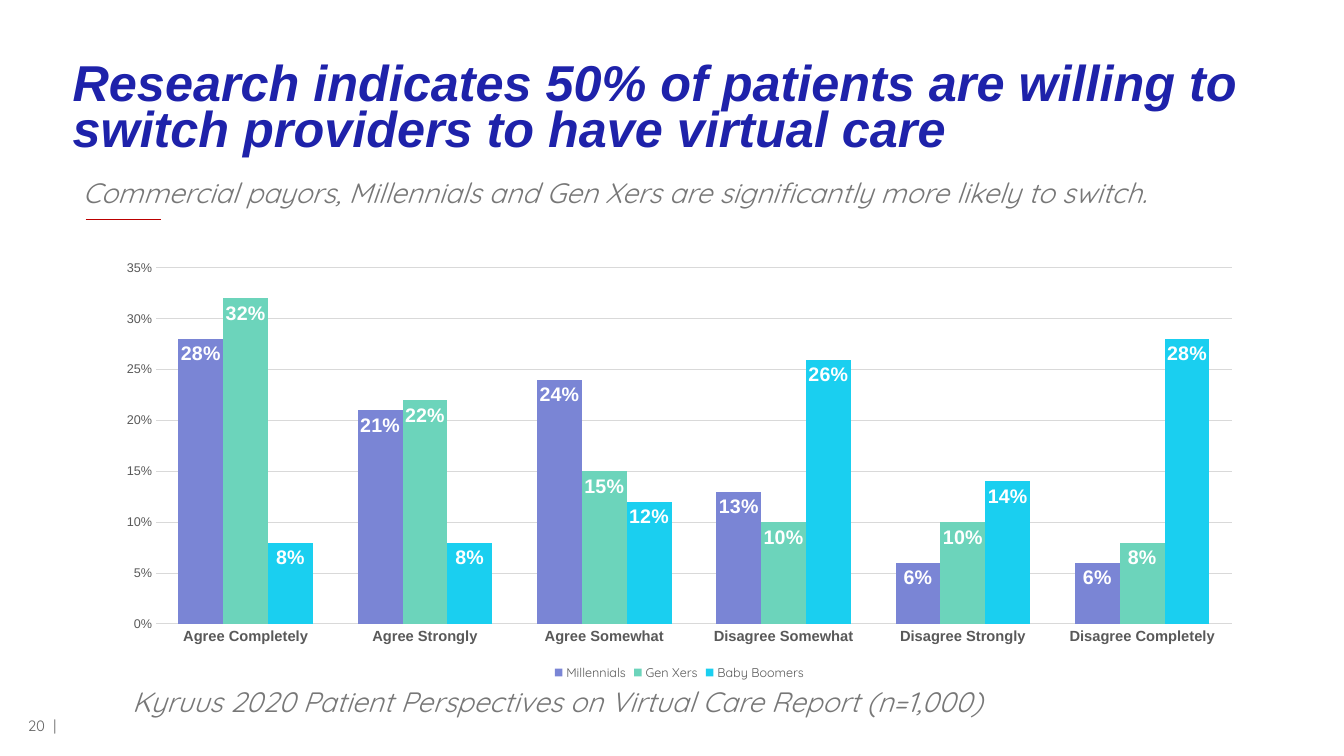
from dataclasses import dataclass

from pptx import Presentation
from pptx.chart.data import CategoryChartData
from pptx.dml.color import RGBColor
from pptx.enum.chart import XL_CHART_TYPE as ChartType
from pptx.enum.chart import XL_LABEL_POSITION as LabelPos
from pptx.enum.chart import XL_LEGEND_POSITION as LegendPos
from pptx.enum.chart import XL_TICK_MARK as TickMark
from pptx.enum.text import MSO_ANCHOR as Anchor
from pptx.enum.text import MSO_AUTO_SIZE as AutoSize
from pptx.enum.text import PP_ALIGN as Align
from pptx.oxml.ns import qn
from pptx.util import Pt

# Content
HEADLINE = ("Research indicates 50% of patients are willing to "
            "switch providers to have virtual care")
FINDING = ("Commercial payors, Millennials and Gen Xers are "
           "significantly more likely to switch.")
CITATION = "Kyruus 2020 Patient Perspectives on Virtual Care Report (n=1,000)"
PAGE_MARK = "20  |"
ANSWERS = ["Agree Completely", "Agree Strongly", "Agree Somewhat",
           "Disagree Somewhat", "Disagree Strongly", "Disagree Completely"]
GENERATIONS = {
    "Millennials": (0.28, 0.21, 0.24, 0.13, 0.06, 0.06),
    "Gen Xers": (0.32, 0.22, 0.15, 0.10, 0.10, 0.08),
    "Baby Boomers": (0.08, 0.08, 0.12, 0.26, 0.14, 0.28),
}


@dataclass(frozen=True)
class Theme:
    strong: str = "Arial"
    light: str = "Quicksand"
    headline: str = "1E22AA"
    muted: str = "777777"
    page: str = "666666"
    accent: str = "BB0000"
    axis: str = "595959"
    grid: str = "D9D9D9"
    label: str = "FFFFFF"
    bars: tuple = ("7A85D5", "6CD4BB", "1ACFF0")
    headline_size: float = 36
    sentence_size: float = 20
    page_size: float = 10.7
    label_size: float = 14
    answer_size: float = 10.5
    scale_size: float = 9


THEME = Theme()

# Layout, in points
SLIDE_W, SLIDE_H = 960, 540
LEFT, TEXT_W, SENTENCE_H = 51.84, 865.44, 33.84
HEADLINE_BOX = (LEFT, 68.4, TEXT_W, 43.2)
FINDING_BOX = (LEFT, 125.28, TEXT_W, SENTENCE_H)
CITATION_BOX = (94.32, 492.48, TEXT_W, SENTENCE_H)
PAGE_BOX = (0, 504, 40.32, 28.8)
CHART_BOX = (74.16, 180, 822.24, 308.88)
RULE_X, RULE_Y, RULE_W = 61.2, 156.96, 54


def rgb(code):
    return RGBColor.from_string(code)


def style_font(font, face, size, color, bold=False, italic=False):
    font.name, font.size = face, Pt(size)
    font.bold, font.italic = bold, italic
    font.color.rgb = rgb(color)


def write(shape, text, *, box, face, size, color, bold=False, italic=False,
          align=Align.LEFT, anchor=Anchor.TOP, spacing=1.0, inset=(0, 0)):
    """Place a shape and fill it with one formatted paragraph."""
    shape.left, shape.top, shape.width, shape.height = map(Pt, box)
    frame = shape.text_frame
    frame.word_wrap, frame.auto_size = True, AutoSize.NONE
    frame.vertical_anchor = anchor
    frame.margin_left = frame.margin_right = Pt(inset[0])
    frame.margin_top = frame.margin_bottom = Pt(inset[1])
    line = frame.paragraphs[0]
    line.alignment, line.line_spacing, line.space_before = align, spacing, Pt(0)
    run = line.add_run()
    run.text = text
    style_font(run.font, face, size, color, bold, italic)


def add_accent_rule(slide):
    rule = slide.shapes.add_connector(
        1, Pt(RULE_X), Pt(RULE_Y), Pt(RULE_X + RULE_W), Pt(RULE_Y))
    rule.line.color.rgb, rule.line.width = rgb(THEME.accent), Pt(1)
    properties = rule._element.spPr
    properties.append(properties.makeelement(qn("a:effectLst"), {}))


def add_survey_chart(slide):
    survey = CategoryChartData(number_format="0%")
    survey.categories = ANSWERS
    for generation, shares in GENERATIONS.items():
        survey.add_series(generation, shares)
    chart = slide.shapes.add_chart(
        ChartType.COLUMN_CLUSTERED, *map(Pt, CHART_BOX), survey).chart
    chart.has_title = False
    style_font(chart.font, THEME.light, 10, THEME.axis)

    # Legend
    chart.has_legend = True
    chart.legend.position = LegendPos.BOTTOM
    chart.legend.include_in_layout = False
    style_font(chart.legend.font, THEME.light, THEME.scale_size, THEME.axis)

    # Axes
    answers, scale = chart.category_axis, chart.value_axis
    for axis in (answers, scale):
        axis.major_tick_mark = axis.minor_tick_mark = TickMark.NONE
    style_font(answers.tick_labels.font, THEME.strong, THEME.answer_size,
               THEME.axis, bold=True)
    style_font(scale.tick_labels.font, THEME.strong, THEME.scale_size, THEME.axis)
    scale.minimum_scale, scale.maximum_scale, scale.major_unit = 0, 0.35, 0.05
    scale.tick_labels.number_format = "0%"
    scale.tick_labels.number_format_is_linked = False
    scale.format.line.fill.background()
    scale.has_major_gridlines = True
    for line in (answers.format.line, scale.major_gridlines.format.line):
        line.color.rgb, line.width = rgb(THEME.grid), Pt(0.75)

    # Columns and their labels
    plot = chart.plots[0]
    plot.gap_width, plot.overlap, plot.vary_by_categories = 100, 0, False
    for columns, color in zip(plot.series, THEME.bars):
        columns.format.fill.solid()
        columns.format.fill.fore_color.rgb = rgb(color)
        columns.invert_if_negative = False
        labels = columns.data_labels
        labels.show_value, labels.position = True, LabelPos.INSIDE_END
        labels.number_format, labels.number_format_is_linked = "0%", False
        style_font(labels.font, THEME.strong, THEME.label_size, THEME.label,
                   bold=True)


def main():
    deck = Presentation()
    deck.slide_width, deck.slide_height = Pt(SLIDE_W), Pt(SLIDE_H)
    slide = deck.slides.add_slide(deck.slide_layouts[0])
    sentence = dict(face=THEME.light, size=THEME.sentence_size,
                    color=THEME.muted, italic=True, spacing=0.85)

    add_accent_rule(slide)

    # Headline and citation
    write(slide.shapes.title, HEADLINE, box=HEADLINE_BOX, face=THEME.strong,
          size=THEME.headline_size, color=THEME.headline, bold=True,
          italic=True, anchor=Anchor.BOTTOM, spacing=0.75)
    write(slide.placeholders[1], CITATION, box=CITATION_BOX, **sentence)

    # Page mark
    page_mark = slide.shapes.add_textbox(*map(Pt, PAGE_BOX))
    write(page_mark, PAGE_MARK, box=PAGE_BOX, face=THEME.light,
          size=THEME.page_size, color=THEME.page, align=Align.RIGHT,
          anchor=Anchor.MIDDLE)

    add_survey_chart(slide)

    # Key finding
    finding = slide.shapes.add_textbox(*map(Pt, FINDING_BOX))
    write(finding, FINDING, box=FINDING_BOX, inset=(7.2, 3.6), **sentence)

    deck.save("out.pptx")


if __name__ == "__main__":
    main()
